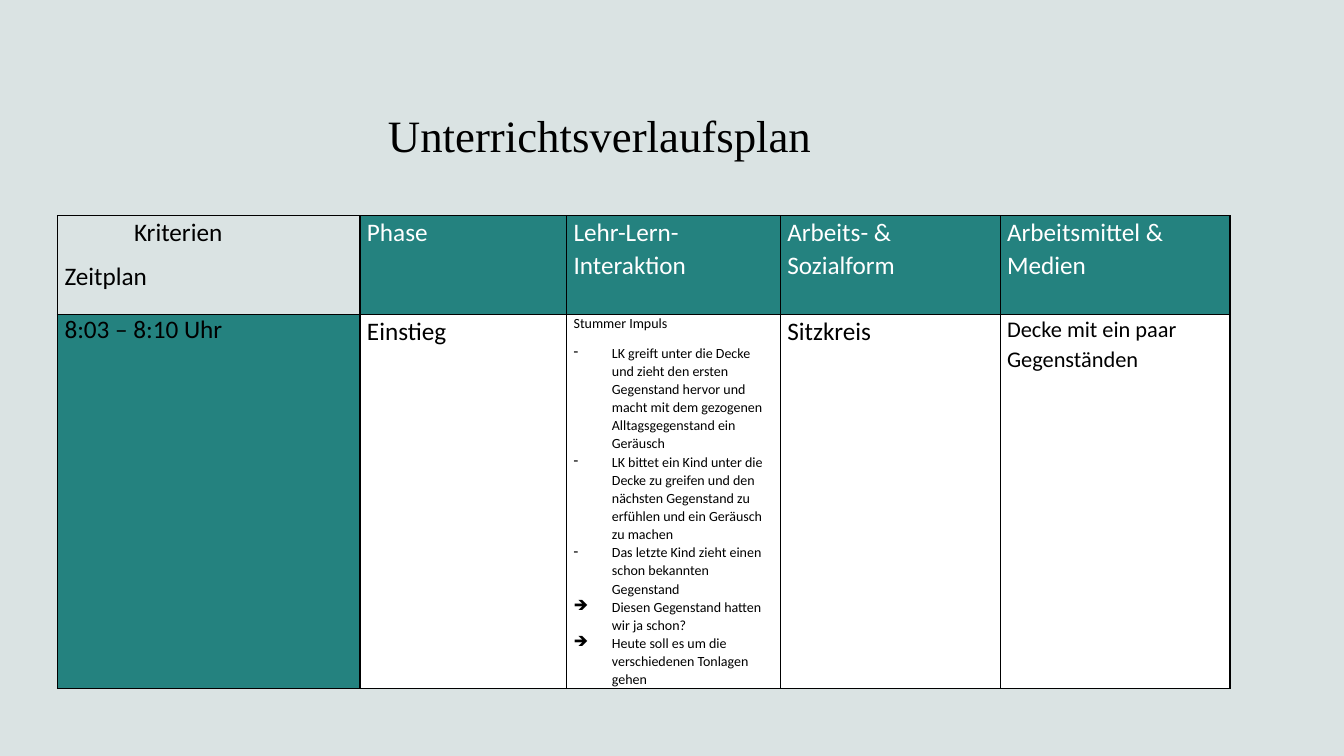
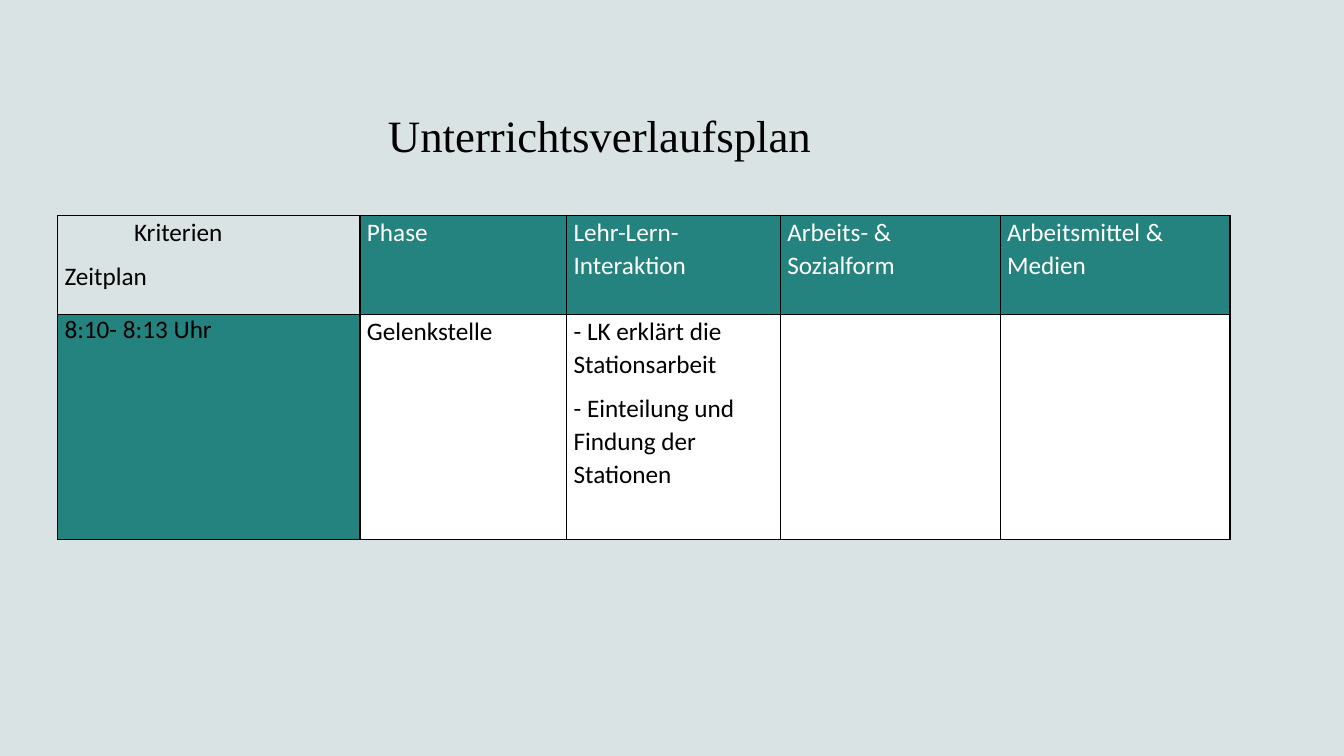
from lxml import etree
from pptx import Presentation
from pptx.dml.color import RGBColor
from pptx.enum.text import MSO_ANCHOR
from pptx.oxml.ns import qn
from pptx.util import Inches, Pt

BOTTOM = MSO_ANCHOR.BOTTOM
BLANK_LAYOUT = 6

COLORS = {
    "background": "DAE3E3",
    "teal": "24827F",
    "white": "FFFFFF",
    "black": "000000",
}
TITLE_FONT = "Times New Roman"
BODY_FONT = "Calibri"

COLUMN_WIDTHS = [3, 2.05, 2.12, 2.18, 2.28]
HEADER_HEIGHT = 0.98
HEADINGS = ["Phase", "Lehr-Lern-Interaktion", "Arbeits- & Sozialform",
            "Arbeitsmittel & Medien"]


def color(name):
    return RGBColor.from_string(COLORS[name])


def write(frame, text, size=18, font=BODY_FONT, ink="black", line=1.07,
          after=8, margin=0, indent=0, bullet=None):
    """Write one paragraph, using the frame's first one while it is empty."""
    para = frame.paragraphs[0]
    if para.runs:
        para = frame.add_paragraph()
    para.line_spacing = line
    para.space_after = Pt(after)
    span = para.add_run()
    span.text = text
    span.font.size = Pt(size)
    span.font.name = font
    span.font.color.rgb = color(ink)
    properties = para._p.get_or_add_pPr()
    properties.set("marL", str(Inches(margin)))
    properties.set("indent", str(Inches(indent)))
    if bullet:
        etree.SubElement(properties, qn("a:buChar")).set("char", bullet)


class LessonDeck:
    def __init__(self):
        self.deck = Presentation()
        self.deck.slide_width = Inches(13.33)
        self.deck.slide_height = Inches(7.5)
        self.page = None

    def add_page(self):
        layout = self.deck.slide_layouts[BLANK_LAYOUT]
        self.page = self.deck.slides.add_slide(layout)
        fill = self.page.background.fill
        fill.solid()
        fill.fore_color.rgb = color("background")

    def add_title(self, text):
        box = self.page.shapes.add_textbox(
            Inches(3.75), Inches(0.43), Inches(9.3), Inches(1.22))
        frame = box.text_frame
        frame.word_wrap = True
        frame.vertical_anchor = BOTTOM
        write(frame, text, size=32, font=TITLE_FONT, line=1, after=0)

    def add_borders(self, cell):
        properties = cell._tc.get_or_add_tcPr()
        for index, side in enumerate(("lnL", "lnR", "lnT", "lnB")):
            border = etree.Element(qn(f"a:{side}"), w=str(Pt(1)))
            solid = etree.SubElement(border, qn("a:solidFill"))
            etree.SubElement(solid, qn("a:srgbClr"), val=COLORS["black"])
            properties.insert(index, border)

    def fill_cell(self, cell, paragraphs, fill=None):
        """Fill a cell with (text, format) pairs."""
        cell.margin_left = cell.margin_right = Inches(0.07)
        cell.margin_top = cell.margin_bottom = 0
        if fill:
            cell.fill.solid()
            cell.fill.fore_color.rgb = color(fill)
        else:
            cell.fill.background()
        self.add_borders(cell)
        for text, style in paragraphs:
            write(cell.text_frame, text, **style)

    def add_plan(self, time, contents, row_height):
        heights = [HEADER_HEIGHT, row_height]
        table = self.page.shapes.add_table(
            len(heights), len(COLUMN_WIDTHS), Inches(0.57), Inches(2.14),
            Inches(sum(COLUMN_WIDTHS)), Inches(sum(heights))).table
        table.first_row = table.horz_banding = False
        for column, width in zip(table.columns, COLUMN_WIDTHS):
            column.width = Inches(width)
        for row, height in zip(table.rows, heights):
            row.height = Inches(height)

        # Criteria and time column
        self.fill_cell(table.cell(0, 0), [("Kriterien", {"margin": 0.69}),
                                          ("Zeitplan", {"after": 0})])
        self.fill_cell(table.cell(1, 0), [(time, {"line": 1})], "teal")

        # Headings and the contents below them
        for index, (heading, content) in enumerate(zip(HEADINGS, contents), 1):
            self.fill_cell(table.cell(0, index),
                           [(heading, {"ink": "white"})], "teal")
            self.fill_cell(table.cell(1, index), content, "white")


DASH = {"size": 10, "after": 0, "margin": 0.38, "indent": -0.38, "bullet": "-"}
ARROW = {**DASH, "bullet": "➔"}

# Lesson phases: time, contents by heading, row height
PHASES = [
    ("8:03 – 8:10 Uhr", [
        [("Einstieg", {})],
        [("Stummer Impuls", {"size": 10}),
         ("LK greift unter die Decke und zieht den ersten Gegenstand hervor "
          "und macht mit dem gezogenen Alltagsgegenstand ein Geräusch", DASH),
         ("LK bittet ein Kind unter die Decke zu greifen und den nächsten "
          "Gegenstand zu erfühlen und ein Geräusch zu machen", DASH),
         ("Das letzte Kind zieht einen schon bekannten Gegenstand", DASH),
         ("Diesen Gegenstand hatten wir ja schon?", ARROW),
         ("Heute soll es um die verschiedenen Tonlagen gehen", ARROW)],
        [("Sitzkreis", {})],
        [("Decke mit ein paar Gegenständen", {"size": 16})],
    ], 3.71),
    ("8:10- 8:13 Uhr", [
        [("Gelenkstelle", {})],
        [("- LK erklärt die Stationsarbeit", {}),
         ("- Einteilung und Findung der Stationen", {})],
        [],
        [],
    ], 2.23),
]


def main():
    lesson = LessonDeck()
    for time, contents, row_height in PHASES:
        lesson.add_page()
        lesson.add_title("Unterrichtsverlaufsplan")
        lesson.add_plan(time, contents, row_height)
    lesson.deck.save("out.pptx")


if __name__ == "__main__":
    main()
